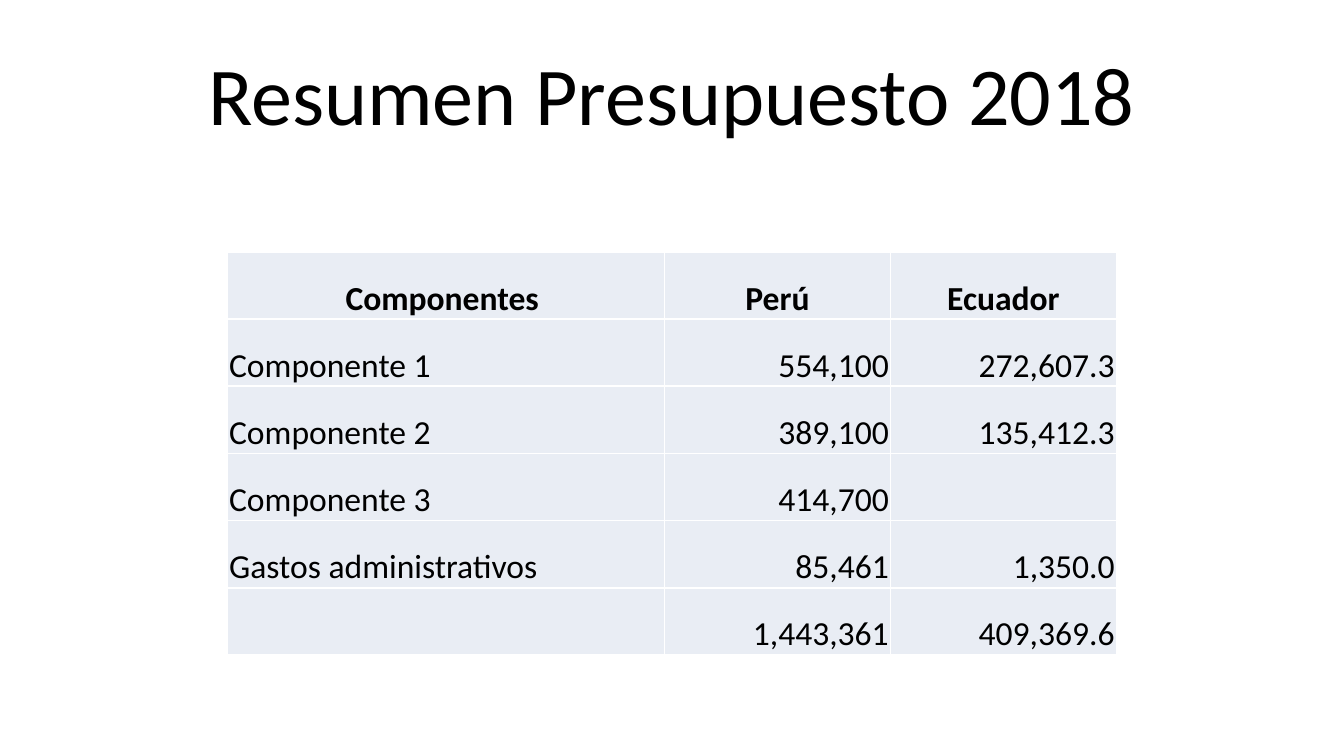
import dataclasses

import pptx
import pptx.dml.color
import pptx.enum.text
import pptx.oxml
import pptx.oxml.ns
import pptx.util

Cm = pptx.util.Cm
Pt = pptx.util.Pt
Align = pptx.enum.text.PP_ALIGN
Anchor = pptx.enum.text.MSO_ANCHOR

FONT = "Calibri"
COLORS = {"text": "000000", "cell": "E9EDF4", "line": "FFFFFF"}
WIDTHS = (8.26, 4.27, 4.27)
HEIGHT = 1.27


@dataclasses.dataclass(frozen=True)
class Row:
    name: str
    peru: str
    ecuador: str
    head: bool = False


ROWS = (
    Row("Componentes ", "Perú", "Ecuador", head=True),
    Row("Componente 1", "554,100", "272,607.3"),
    Row("Componente 2", "389,100", "135,412.3"),
    Row("Componente 3", "414,700", ""),
    Row("Gastos administrativos", "85,461", "1,350.0"),
    Row("", "1,443,361", "409,369.6"),
)


def color(name: str) -> pptx.dml.color.RGBColor:
    return pptx.dml.color.RGBColor.from_string(COLORS[name])


def write(frame, text: str, size: float, align, bold: bool = False) -> None:
    para = frame.paragraphs[0]
    para.alignment = align
    para.font.size = Pt(size)
    if text:
        run = para.add_run()
        run.text = text
        run.font.name = FONT
        run.font.size = Pt(size)
        run.font.bold = bold
        run.font.color.rgb = color("text")


def border(cell) -> None:
    """Rule all four sides; must run before the cell is filled."""
    props = cell._tc.get_or_add_tcPr()
    for side in ("lnL", "lnR", "lnT", "lnB"):
        props.append(pptx.oxml.parse_xml(
            f'<a:{side} {pptx.oxml.ns.nsdecls("a")} w="{Pt(1)}"><a:solidFill>'
            f'<a:srgbClr val="{COLORS["line"]}"/></a:solidFill></a:{side}>'))


def style(cell) -> None:
    border(cell)
    cell.fill.solid()
    cell.fill.fore_color.rgb = color("cell")
    cell.vertical_anchor = Anchor.BOTTOM
    cell.margin_left = cell.margin_right = cell.margin_top = Cm(0.03)
    cell.margin_bottom = 0


def add_title(slide, text: str) -> None:
    title = slide.shapes.title
    title.left, title.top = Cm(1.27), Cm(0.57)
    title.width, title.height = Cm(22.86), Cm(2.38)
    title.text_frame.vertical_anchor = Anchor.MIDDLE
    write(title.text_frame, text, 44, Align.CENTER)


def add_budget(slide, rows: tuple[Row, ...]) -> None:
    table = slide.shapes.add_table(
        len(rows), len(WIDTHS), Cm(4.3), Cm(4.76),
        Cm(sum(WIDTHS)), Cm(HEIGHT * len(rows))).table
    table.first_row = table.horz_banding = False
    for col, width in zip(table.columns, WIDTHS):
        col.width = Cm(width)
    for r, row in enumerate(rows):
        table.rows[r].height = Cm(HEIGHT)
        for c, text in enumerate((row.name, row.peru, row.ecuador)):
            cell = table.cell(r, c)
            style(cell)
            side = Align.RIGHT if c else Align.LEFT
            write(cell.text_frame, text, 18,
                  Align.CENTER if row.head else side, row.head)


def main() -> None:
    deck = pptx.Presentation()
    deck.slide_width, deck.slide_height = Cm(25.4), Cm(14.29)
    slide = deck.slides.add_slide(deck.slide_layouts[5])
    add_title(slide, "Resumen Presupuesto 2018")
    add_budget(slide, ROWS)
    deck.save("out.pptx")


if __name__ == "__main__":
    main()
